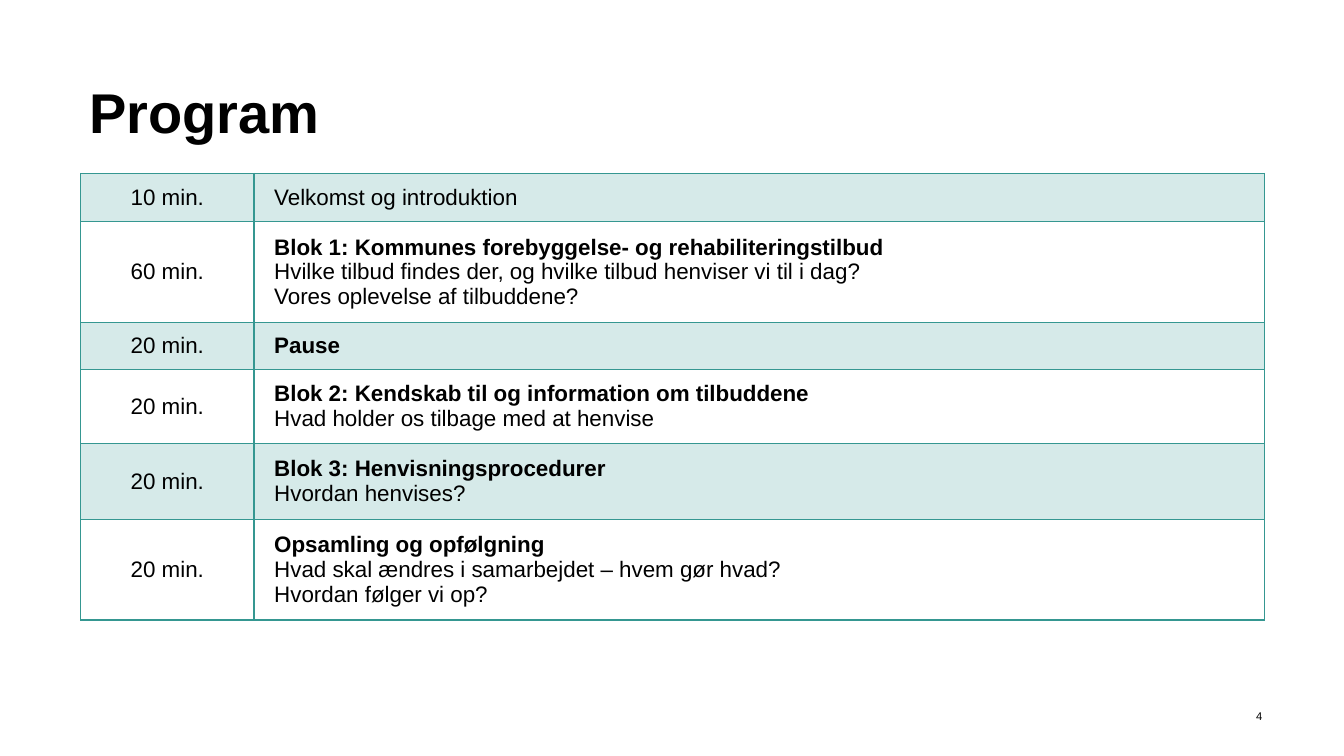
from lxml import etree
from pptx import Presentation
from pptx.dml.color import RGBColor
from pptx.enum.text import MSO_ANCHOR, PP_ALIGN
from pptx.oxml.ns import qn
from pptx.util import Inches, Pt

TEAL = "359791"
BLACK = "000000"


def colour(value):
    return RGBColor.from_string(value)


class ProgramSlide:
    font = "Arial"

    def __init__(self, deck):
        self.page = deck.slides.add_slide(deck.slide_layouts[6])

    def add_span(self, para, text, size, bold=False):
        span = para.add_run()
        span.text = text
        span.font.name = self.font
        span.font.size = Pt(size)
        span.font.bold = bold
        span.font.color.rgb = colour(BLACK)

    def add_text(self, text, left, top, width, height, size, bold=False,
                 align=PP_ALIGN.LEFT, inset=(0.1, 0.05), spacing=1.0):
        box = self.page.shapes.add_textbox(
            Inches(left), Inches(top), Inches(width), Inches(height))
        frame = box.text_frame
        frame.word_wrap = True
        frame.vertical_anchor = MSO_ANCHOR.BOTTOM
        frame.margin_left = frame.margin_right = Inches(inset[0])
        frame.margin_top = frame.margin_bottom = Inches(inset[1])
        para = frame.paragraphs[0]
        para.alignment = align
        para.line_spacing = spacing
        self.add_span(para, text, size, bold)

    def add_borders(self, cell):
        properties = cell._tc.get_or_add_tcPr()
        for side in ("a:lnL", "a:lnR", "a:lnT", "a:lnB"):
            line = etree.SubElement(properties, qn(side), w=str(Pt(1)))
            fill = etree.SubElement(line, qn("a:solidFill"))
            etree.SubElement(fill, qn("a:srgbClr"), val=TEAL)

    def fill_cell(self, cell, lines, align, shaded):
        cell.vertical_anchor = MSO_ANCHOR.MIDDLE
        cell.margin_left = cell.margin_right = Inches(0.2)
        cell.margin_top = cell.margin_bottom = Inches(0.1)
        self.add_borders(cell)
        if shaded:
            cell.fill.solid()
            cell.fill.fore_color.rgb = colour(TEAL)
            tint = cell._tc.tcPr.find(qn("a:solidFill")).find(qn("a:srgbClr"))
            etree.SubElement(tint, qn("a:alpha"), val="20000")
        else:
            cell.fill.background()
        frame = cell.text_frame
        for index, (text, bold) in enumerate(lines):
            para = frame.add_paragraph() if index else frame.paragraphs[0]
            para.alignment = align
            self.add_span(para, text, 16, bold)

    def add_program(self, left, top, widths, rows):
        heights = [row[0] for row in rows]
        table = self.page.shapes.add_table(
            len(rows), len(widths), Inches(left), Inches(top),
            Inches(sum(widths)), Inches(sum(heights))).table
        table.first_row = False
        table.horz_banding = False
        for column, width in zip(table.columns, widths):
            column.width = Inches(width)
        for index, (height, duration, heading, details) in enumerate(rows):
            table.rows[index].height = Inches(height)
            shaded = index % 2 == 0
            topic = [(heading, True)] if heading else []
            topic += [(detail, False) for detail in details]
            self.fill_cell(table.cell(index, 0), [(duration, False)],
                           PP_ALIGN.CENTER, shaded)
            self.fill_cell(table.cell(index, 1), topic, PP_ALIGN.LEFT, shaded)


# Height, duration, heading and details of each part
PROGRAM = [
    (0.48, "10 min.", "", ["Velkomst og introduktion"]),
    (0.94, "60 min.", "Blok 1: Kommunes forebyggelse- og rehabiliteringstilbud",
     ["Hvilke tilbud findes der, og hvilke tilbud henviser vi til i dag?",
      "Vores oplevelse af tilbuddene?"]),
    (0.45, "20 min.", "Pause", []),
    (0.69, "20 min.", "Blok 2: Kendskab til og information om tilbuddene",
     ["Hvad holder os tilbage med at henvise"]),
    (0.75, "20 min.", "Blok 3: Henvisningsprocedurer", ["Hvordan henvises?"]),
    (0.94, "20 min.", "Opsamling og opfølgning",
     ["Hvad skal ændres i samarbejdet – hvem gør hvad?",
      "Hvordan følger vi op?"]),
]


def main():
    deck = Presentation()
    deck.slide_width = Inches(13.33)
    deck.slide_height = Inches(7.5)
    slide = ProgramSlide(deck)

    # Title
    slide.add_text("Program", 0.79, 0.84, 11.75, 0.64, 40, bold=True, spacing=0.8)

    # Timetable
    slide.add_program(0.8, 1.72, [1.72, 10.02], PROGRAM)

    # Page number
    slide.add_text("4", 11.74, 7.01, 0.81, 0.19, 8,
                   align=PP_ALIGN.RIGHT, inset=(0.03, 0.03))

    deck.save("out.pptx")


if __name__ == "__main__":
    main()
